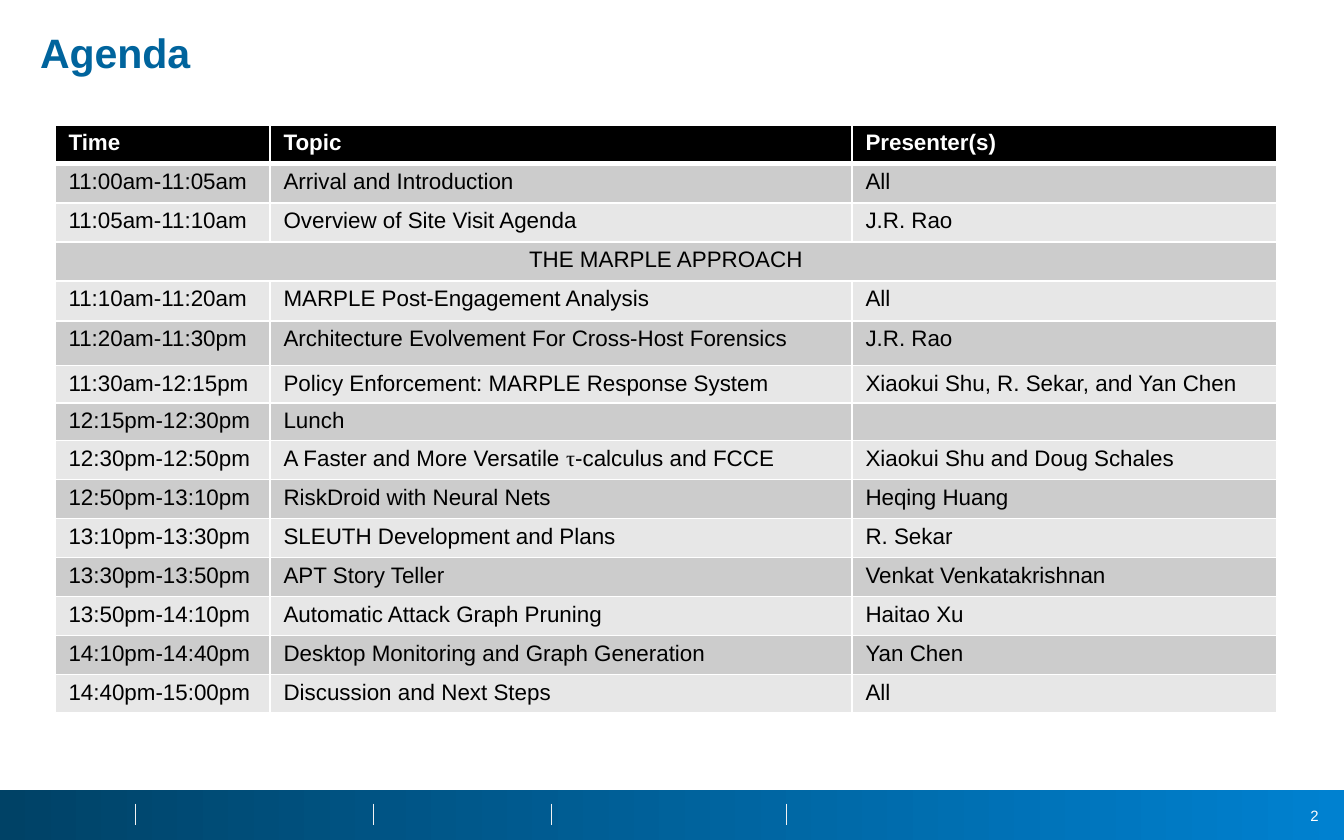
"""Build the Agenda slide: title, schedule table and footer bar."""
from itertools import groupby

from lxml import etree
from pptx import Presentation
from pptx.dml.color import RGBColor
from pptx.enum.shapes import MSO_CONNECTOR, MSO_SHAPE
from pptx.enum.text import MSO_ANCHOR, PP_ALIGN
from pptx.oxml.ns import qn
from pptx.util import Inches, Pt

RECTANGLE = MSO_SHAPE.RECTANGLE
STRAIGHT = MSO_CONNECTOR.STRAIGHT
MIDDLE, TOP = MSO_ANCHOR.MIDDLE, MSO_ANCHOR.TOP
LEFT, CENTER, RIGHT = PP_ALIGN.LEFT, PP_ALIGN.CENTER, PP_ALIGN.RIGHT

THEME = {
    "font": "Arial", "greek_font": "Times New Roman",
    "title": "00649D", "white": "FFFFFF", "black": "000000",
    "bands": ("CCCCCC", "E7E7E7"), "footer": ("004266", "0081D0"),
    "divider": "F2F2F2",
    "title_size": 22, "table_size": 12, "number_size": 8,
}

TITLE = "Agenda"
PAGE_NUMBER = "2"
HEADER = ("Time", "Topic", "Presenter(s)")
SCHEDULE = [
    ("11:00am-11:05am", "Arrival and Introduction", "All"),
    ("11:05am-11:10am", "Overview of Site Visit Agenda", "J.R. Rao"),
    ("THE MARPLE APPROACH",),
    ("11:10am-11:20am", "MARPLE Post-Engagement Analysis", "All"),
    ("11:20am-11:30pm", "Architecture Evolvement For Cross-Host Forensics", "J.R. Rao"),
    ("11:30am-12:15pm", "Policy Enforcement: MARPLE Response System",
     "Xiaokui Shu, R. Sekar, and Yan Chen"),
    ("12:15pm-12:30pm", "Lunch", ""),
    ("12:30pm-12:50pm", "A Faster and More Versatile τ-calculus and FCCE",
     "Xiaokui Shu and Doug Schales"),
    ("12:50pm-13:10pm", "RiskDroid with Neural Nets", "Heqing Huang"),
    ("13:10pm-13:30pm", "SLEUTH Development and Plans", "R. Sekar"),
    ("13:30pm-13:50pm", "APT Story Teller", "Venkat Venkatakrishnan"),
    ("13:50pm-14:10pm", "Automatic Attack Graph Pruning", "Haitao Xu"),
    ("14:10pm-14:40pm", "Desktop Monitoring and Graph Generation", "Yan Chen"),
    ("14:40pm-15:00pm", "Discussion and Next Steps", "All"),
]
COLUMN_WIDTHS = (1.6, 4.33, 3.16)
ROW_HEIGHT = 0.29
SPECIAL_HEIGHTS = {4: 0.3, 5: 0.33, 6: 0.28, 7: 0.28}
CELL_MARGIN = 0.04
DIVIDERS = (1.01, 2.78, 4.1, 5.85)


def color(name):
    return RGBColor.from_string(name)


def write(paragraph, text, size, text_color, bold=False, align=LEFT):
    paragraph.alignment = align
    for is_greek, letters in groupby(text, key=lambda letter: letter == "τ"):
        span = paragraph.add_run()
        span.text = "".join(letters)
        span.font.name = THEME["greek_font" if is_greek else "font"]
        span.font.size = Pt(size)
        span.font.bold = bold
        span.font.color.rgb = color(text_color)
    if not text:
        paragraph._p.get_or_add_endParaRPr().set("sz", str(size * 100))


def add_text(page, place, text, size, text_color, anchor, **style):
    box = page.shapes.add_textbox(*map(Inches, place))
    box.text_frame.word_wrap = True
    box.text_frame.vertical_anchor = anchor
    paragraph = box.text_frame.paragraphs[0]
    write(paragraph, text, size, text_color, **style)
    return paragraph


def set_borders(cell, widths):
    properties = cell._tc.get_or_add_tcPr()
    for side, width in zip(("lnL", "lnR", "lnT", "lnB"), widths):
        line = etree.SubElement(properties, qn(f"a:{side}"), w=str(Pt(width)))
        fill = etree.SubElement(line, qn("a:solidFill"))
        etree.SubElement(fill, qn("a:srgbClr"), val=THEME["white"])


def add_schedule(page):
    rows = [HEADER] + SCHEDULE
    heights = [SPECIAL_HEIGHTS.get(index, ROW_HEIGHT) for index in range(len(rows))]
    table = page.shapes.add_table(
        len(rows), len(HEADER), Inches(0.41), Inches(0.93),
        Inches(sum(COLUMN_WIDTHS)), Inches(sum(heights))).table
    for column, width in zip(table.columns, COLUMN_WIDTHS):
        column.width = Inches(width)
    for index, (values, height) in enumerate(zip(rows, heights)):
        table.rows[index].height = Inches(height)
        is_header, is_section = index == 0, len(values) == 1
        band = THEME["black"] if is_header else THEME["bands"][(index - 1) % 2]
        padded = values + ("",) * (len(HEADER) - len(values))
        for position, text in enumerate(padded):
            cell = table.cell(index, position)
            cell.margin_top = cell.margin_bottom = Inches(CELL_MARGIN)
            set_borders(cell, (1, 1, 3 if index == 1 else 1, 3 if is_header else 1))
            cell.fill.solid()
            cell.fill.fore_color.rgb = color(band)
            write(cell.text_frame.paragraphs[0], text, THEME["table_size"],
                  THEME["white" if is_header else "black"], bold=is_header,
                  align=CENTER if is_section else LEFT)
        if is_section:
            table.cell(index, 0).merge(table.cell(index, len(HEADER) - 1))


def add_footer(page):
    bar = page.shapes.add_shape(
        RECTANGLE, Inches(0), Inches(5.88), Inches(10), Inches(0.38))
    bar.shadow.inherit = False
    bar.line.fill.background()
    bar.fill.gradient()
    bar.fill.gradient_angle = 0
    for stop, shade, place in zip(bar.fill.gradient_stops, THEME["footer"], (0, 1)):
        stop.color.rgb = color(shade)
        stop.position = place
    add_text(page, (9.49, 5.95, 0.42, 0.24), PAGE_NUMBER, THEME["number_size"],
             THEME["white"], MIDDLE, align=RIGHT)
    for left in DIVIDERS:
        divider = page.shapes.add_connector(
            STRAIGHT, Inches(left), Inches(5.98), Inches(left), Inches(6.14))
        divider.line.color.rgb = color(THEME["divider"])
        divider.line.width = Pt(0.25)
        etree.SubElement(divider._element.spPr, qn("a:effectLst"))


def main():
    deck = Presentation()
    deck.slide_width, deck.slide_height = Inches(10), Inches(6.25)
    page = deck.slides.add_slide(deck.slide_layouts[6])
    add_footer(page)
    heading = add_text(page, (0.2, 0.2, 9.59, 0.36), TITLE, THEME["title_size"],
                       THEME["title"], TOP, bold=True)
    heading.line_spacing = 0.9
    add_schedule(page)
    deck.save("out.pptx")


if __name__ == "__main__":
    main()
